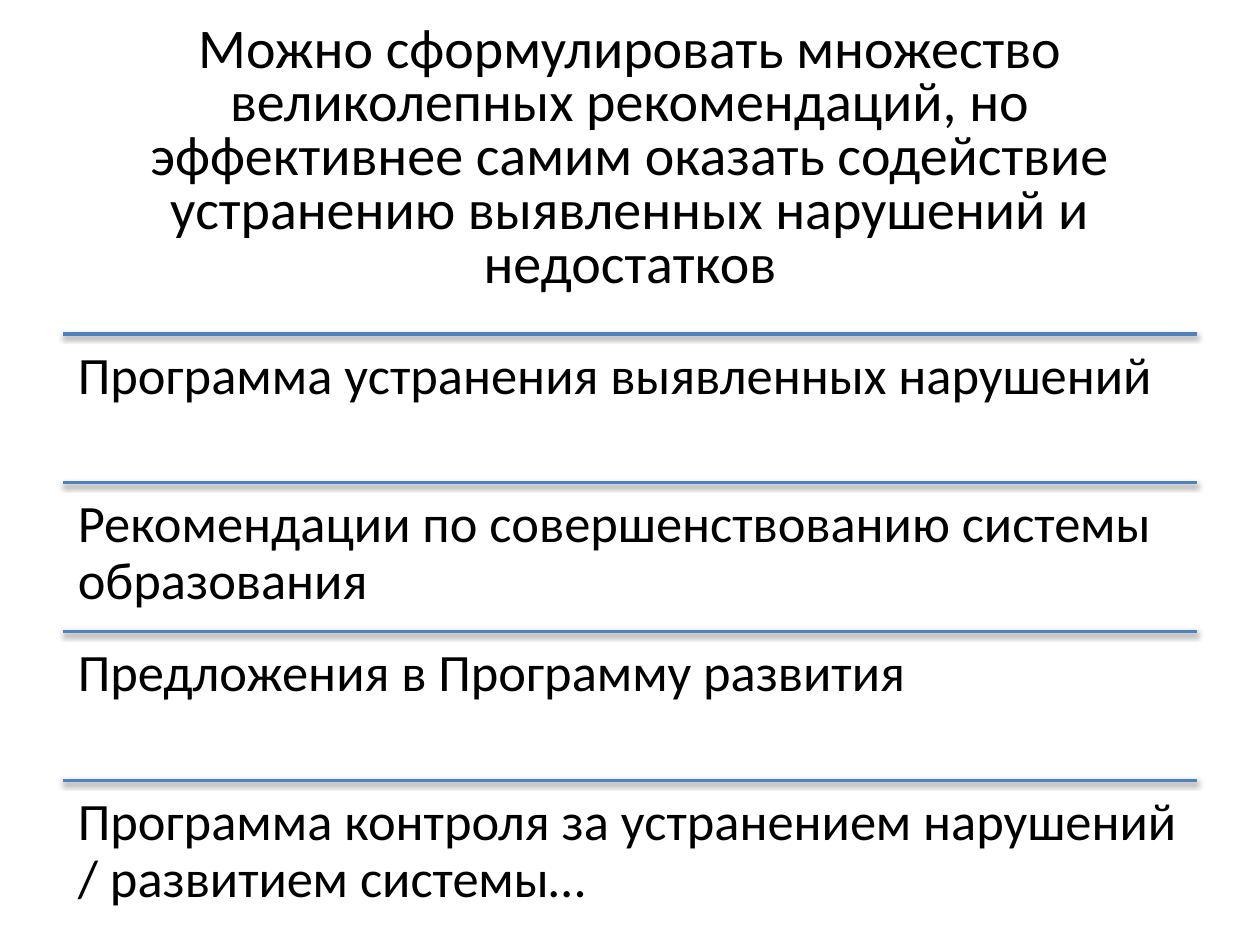
from pptx import Presentation
from pptx.dml.color import RGBColor
from pptx.enum.shapes import MSO_CONNECTOR
from pptx.enum.text import MSO_ANCHOR, MSO_AUTO_SIZE, PP_ALIGN
from pptx.util import Cm, Pt

COLORS = {"text": "000000", "rule": "4F81BD"}
LEFT, WIDTH = 1.27, 22.86
TOP, STEP = 6.73, 3

TITLE = (
    "Можно сформулировать множество великолепных рекомендаций, "
    "но эффективнее самим оказать содействие устранению "
    "выявленных нарушений и недостатков"
)
ITEMS = [
    "Программа устранения выявленных нарушений",
    "Рекомендации по совершенствованию системы образования",
    "Предложения в Программу развития",
    "Программа контроля за устранением нарушений / развитием системы…",
]


def apply(target, values):
    for name, value in values.items():
        setattr(target, name, value)


class Deck:
    font = "Calibri"
    inset = Cm(0.3)

    def __init__(self, show):
        self.slide = show.slides.add_slide(show.slide_layouts[5])

    def label(self, frame, text, size, para):
        line = frame.paragraphs[0]
        apply(line, para)
        run = line.add_run()
        run.text = text
        apply(run.font, {"name": self.font, "size": Pt(size)})
        run.font.color.rgb = RGBColor.from_string(COLORS["text"])

    def title(self, text, top, height):
        shape = self.slide.shapes.title
        apply(shape, {"left": Cm(LEFT), "top": Cm(top),
                      "width": Cm(WIDTH), "height": Cm(height)})
        frame = shape.text_frame
        apply(frame, {"word_wrap": True, "auto_size": MSO_AUTO_SIZE.NONE,
                      "vertical_anchor": MSO_ANCHOR.MIDDLE})
        self.label(frame, text, 32,
                   {"alignment": PP_ALIGN.CENTER, "line_spacing": 0.8})

    def rule(self, top):
        line = self.slide.shapes.add_connector(
            MSO_CONNECTOR.STRAIGHT, Cm(LEFT), Cm(top),
            Cm(LEFT + WIDTH), Cm(top)).line
        line.width = Pt(2)
        line.color.rgb = RGBColor.from_string(COLORS["rule"])

    def item(self, text, top):
        frame = self.slide.shapes.add_textbox(
            Cm(LEFT), Cm(top), Cm(WIDTH), Cm(STEP)).text_frame
        apply(frame, {"word_wrap": True, "vertical_anchor": MSO_ANCHOR.TOP})
        sides = ("left", "top", "right", "bottom")
        apply(frame, {f"margin_{side}": self.inset for side in sides})
        self.label(frame, text, 30,
                   {"alignment": PP_ALIGN.LEFT, "line_spacing": 0.9,
                    "space_after": Pt(10.5)})


def main():
    show = Presentation()
    apply(show, {"slide_width": Cm(25.4), "slide_height": Cm(19.05)})
    deck = Deck(show)
    deck.title(TITLE, 0.33, 5.77)
    for row, text in enumerate(ITEMS):
        top = TOP + row * STEP
        deck.rule(top)
        deck.item(text, top)
    show.save("out.pptx")


if __name__ == "__main__":
    main()
